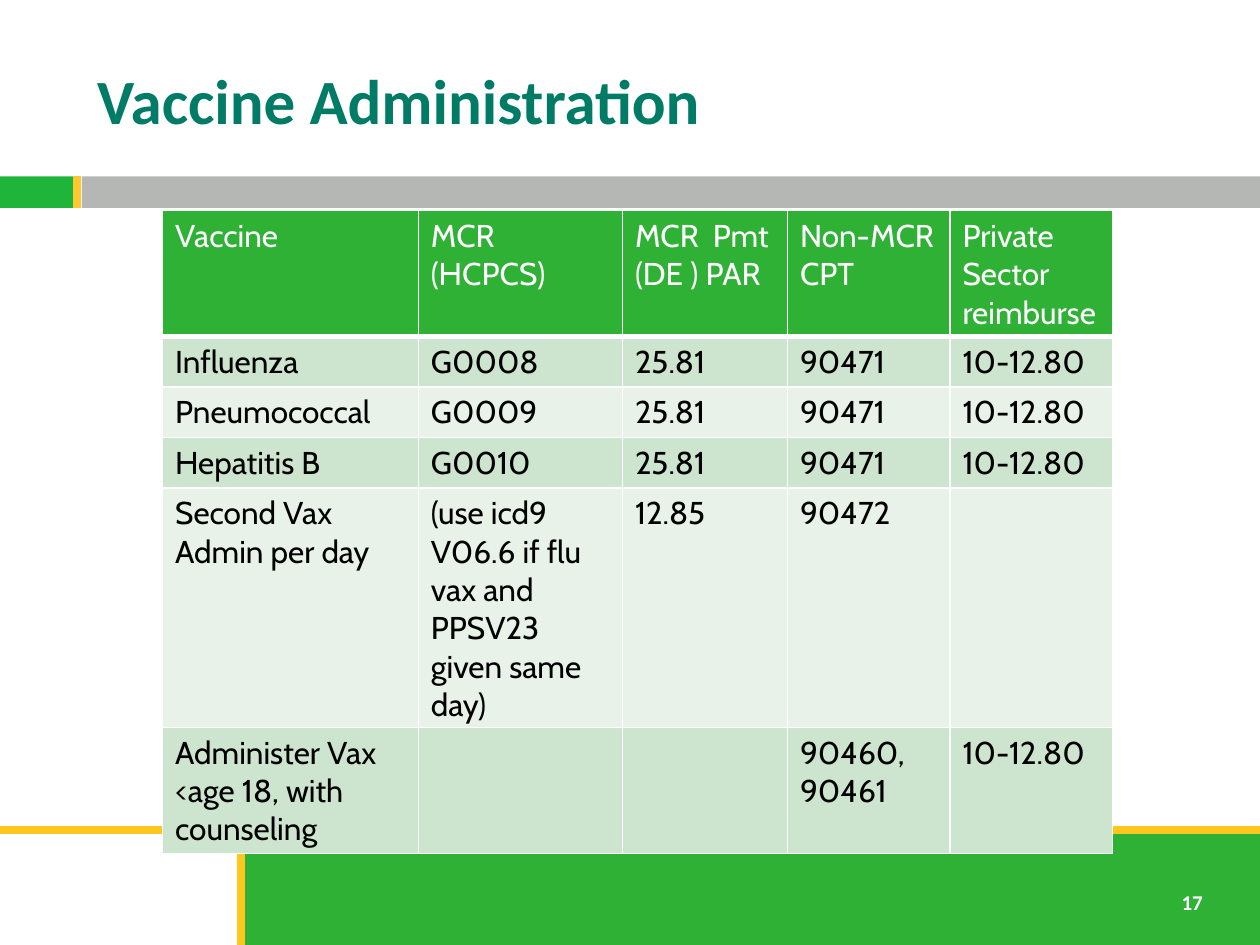
from lxml import etree
from pptx import Presentation
from pptx import util as u
from pptx.dml.color import RGBColor
from pptx.enum import shapes, text
from pptx.oxml.ns import qn

GREEN, WHITE = "2EB135", "FFFFFF"
BANDS = ["CDE4CE", "E8F2E8"]
COLS = [2.03, 1.62, 1.31, 1.29, 1.29]
HEIGHTS = [0.61, 0.35, 0.35, 0.35, 1.39, 0.95]
ROWS = [
    ["Vaccine", "MCR (HCPCS)", "MCR  Pmt\n(DE ) PAR", "Non-MCR CPT",
     "Private Sector reimburse"],
    ["Influenza", "G0008", "25.81", "90471", "10-12.80"],
    ["Pneumococcal", "G0009", "25.81", "90471", "10-12.80"],
    ["Hepatitis B", "G0010", "25.81", "90471", "10-12.80"],
    ["Second Vax Admin per day",
     "(use icd9 V06.6 if flu vax and PPSV23 given same day)",
     "12.85", "90472", ""],
    ["Administer Vax <age 18, with counseling", "", "", "90460, 90461",
     "10-12.80"],
]


def color(code):
    return RGBColor.from_string(code)


def box(at):
    return [u.Inches(n) for n in at]


def write(frame, words, size, font, code, bold=False):
    """Fill a text frame, one paragraph for each line of words."""
    for i, line in enumerate(words.split("\n")):
        para = frame.add_paragraph() if i else frame.paragraphs[0]
        para.alignment = text.PP_ALIGN.LEFT
        para.font.size = u.Pt(size)
        if line:
            run = para.add_run()
            run.text = line
            run.font.size = u.Pt(size)
            run.font.name = font
            run.font.bold = bold
            run.font.color.rgb = color(code)


def add_bar(slide, at, code):
    bar = slide.shapes.add_shape(shapes.MSO_SHAPE.RECTANGLE, *box(at))
    bar.shadow.inherit = False
    bar.fill.solid()
    bar.fill.fore_color.rgb = color(code)
    bar.line.fill.background()


def add_rule(slide, ends, code):
    rule = slide.shapes.add_connector(shapes.MSO_CONNECTOR.STRAIGHT, *box(ends))
    rule.line.color.rgb = color(code)
    rule.line.width = u.Pt(4.5)
    etree.SubElement(rule._element.spPr, qn("a:effectLst"))


def add_title(slide, words):
    title = slide.shapes.title
    title.left, title.top, title.width, title.height = box([0.67, 0.25, 8.92, 1.08])
    title.text_frame.vertical_anchor = text.MSO_ANCHOR.MIDDLE
    write(title.text_frame, words, 36, "Calibri", "007C66", True)


def add_number(slide, words):
    note = slide.shapes.add_textbox(*box([9.28, 7.01, 0.4, 0.3]))
    note.text_frame.word_wrap = False
    write(note.text_frame, words, 12, "Calibri", WHITE, True)


def set_edges(cell, base):
    """Draw white cell borders, with the bottom one base points wide."""
    props = cell._tc.get_or_add_tcPr()
    for i, (tag, width) in enumerate([("lnL", 1), ("lnR", 1), ("lnT", 1), ("lnB", base)]):
        edge = etree.Element(qn(f"a:{tag}"), w=str(u.Pt(width)))
        fill = etree.SubElement(edge, qn("a:solidFill"))
        etree.SubElement(fill, qn("a:srgbClr"), val=WHITE)
        props.insert(i, edge)


def add_grid(slide):
    at = [1.29, 1.67, sum(COLS), sum(HEIGHTS)]
    table = slide.shapes.add_table(len(ROWS), len(COLS), *box(at)).table
    for col, width in zip(table.columns, COLS):
        col.width = u.Inches(width)
    for r, (row, height) in enumerate(zip(ROWS, HEIGHTS)):
        table.rows[r].height = u.Inches(height)
        for c, words in enumerate(row):
            cell = table.cell(r, c)
            cell.fill.solid()
            cell.fill.fore_color.rgb = color(BANDS[(r - 1) % 2] if r else GREEN)
            set_edges(cell, 1 if r else 3)
            write(cell.text_frame, words, 18, "Cabin", "000000" if r else WHITE)


def main():
    deck = Presentation()
    deck.slide_width, deck.slide_height = box([10, 7.5])
    slide = deck.slides.add_slide(deck.slide_layouts[5])
    add_bar(slide, [0, 1.35, 10, 0.35], WHITE)
    add_bar(slide, [0, 1.4, 0.58, 0.25], "1EB53A")
    add_bar(slide, [0.65, 1.4, 9.35, 0.25], "B5B7B4")
    add_bar(slide, [1.91, 6.59, 8.09, 0.91], GREEN)
    add_rule(slide, [0, 6.59, 10, 6.59], "FFC61E")
    add_rule(slide, [1.91, 6.59, 1.91, 7.5], "FFC61E")
    add_rule(slide, [0.61, 1.4, 0.61, 1.65], "FFC82E")
    add_number(slide, "17")
    add_title(slide, "Vaccine Administration")
    add_grid(slide)
    deck.save("out.pptx")


if __name__ == "__main__":
    main()
